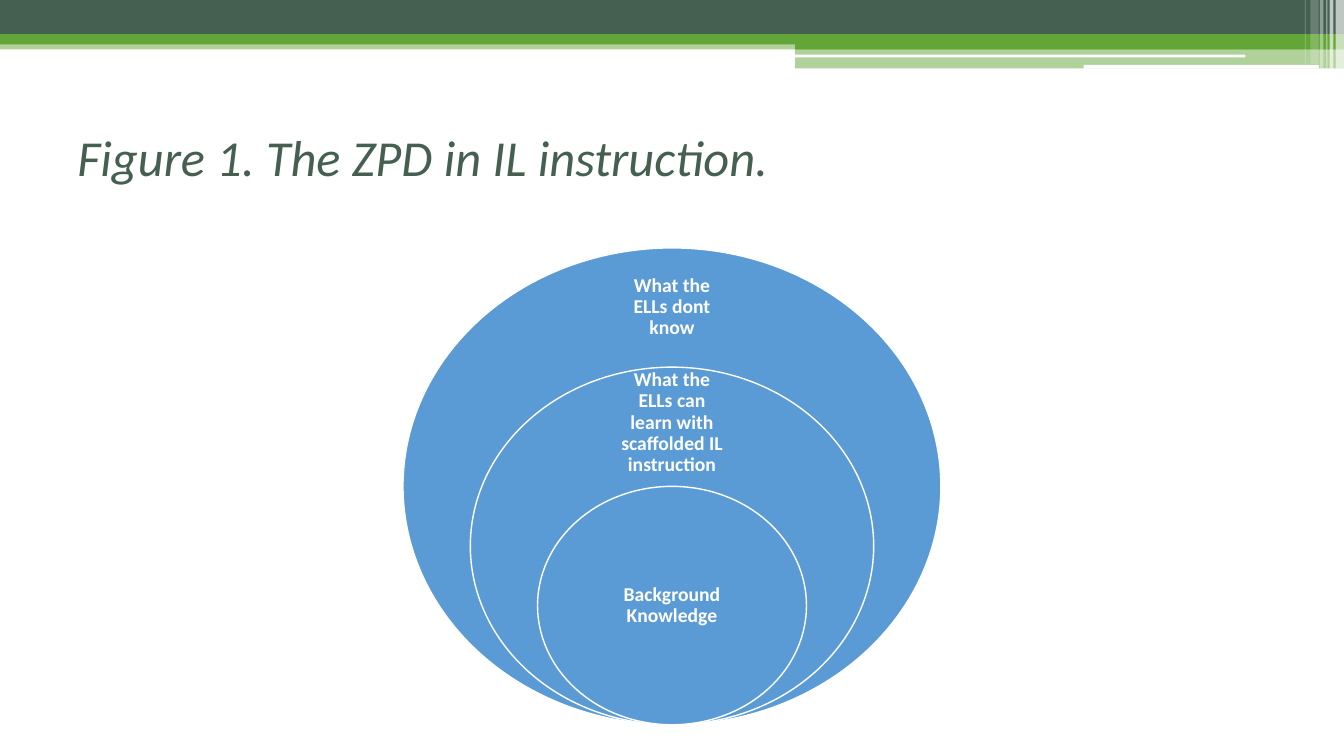
from pptx import Presentation
from pptx.dml.color import RGBColor
from pptx.enum import shapes, text
from pptx.oxml import ns
from pptx.util import Pt
from lxml import etree

W, H = 960, 540
DARK, GREEN, WHITE, BLUE = "455F51", "63A537", "FFFFFF", "5B9BD5"
TITLE = "Figure 1. The ZPD in IL instruction."

# Header bands: left, top, width, height, colour, opacity %
BANDS = [
    (0, 28.8, W, 6.5, GREEN, 50),
    (0, 0, W, 24.5, DARK, 100),
    (0, 24.5, W, 7.2, GREEN, 100),
    (568, 28.1, 392, 7.2, GREEN, 100),
    (568, 34.7, 392, 14.2, GREEN, 50),
]
# White rules in the header: left, top, width, height
RULES = [(567.5, 39, 322, 2), (774, 46.3, 168, 2.7)]
# White stripes at the right: left, width, height, opacity %
STRIPES = [
    (954, 6, 49, 65), (949.8, 2.7, 49, 65), (947.5, 0.7, 49, 60),
    (942.7, 2.7, 49, 40), (936, 6, 46, 20), (932, 0.7, 46, 30),
]
# Nested circles: label, scale, label centre, label height
CIRCLES = [
    ("What the ELLs dont know", 1, 219.6, 36),
    ("What the ELLs can learn with scaffolded IL instruction", 0.75, 302, 34),
    ("Background Knowledge", 0.5, 432.7, 60),
]
CENTRE, BOTTOM = 480, 517.7
OUTER_W, OUTER_H, LABEL_W = 384.2, 340.6, 95.5


def rgb(value):
    return RGBColor.from_string(value)


def add_shape(kind, left, top, width, height, colour, opacity=100, line=None):
    sp = s.shapes.add_shape(kind, Pt(left), Pt(top), Pt(width), Pt(height))
    sp.shadow.inherit = False
    sp.fill.solid()
    sp.fill.fore_color.rgb = rgb(colour)
    if opacity < 100:
        clr = sp.fill._xPr.find(".//" + ns.qn("a:srgbClr"))
        etree.SubElement(clr, ns.qn("a:alpha"), val=str(opacity * 1000))
    if line:
        sp.line.color.rgb = rgb(line)
        sp.line.width = Pt(1)
    else:
        sp.line.fill.background()
    return sp


def write(sp, words, size, colour, bold=False, italic=False, spacing=1.0,
          align=text.PP_ALIGN.LEFT, anchor=text.MSO_ANCHOR.MIDDLE,
          inset_x=7.2, inset_y=0):
    tf = sp.text_frame
    tf.word_wrap = True
    tf.auto_size = text.MSO_AUTO_SIZE.NONE
    tf.vertical_anchor = anchor
    tf.margin_left = tf.margin_right = Pt(inset_x)
    tf.margin_top = tf.margin_bottom = Pt(inset_y)
    p = tf.paragraphs[0]
    p.alignment, p.line_spacing = align, spacing
    r = p.add_run()
    r.text = words
    r.font.name, r.font.size = "Calibri", Pt(size)
    r.font.bold, r.font.italic = bold, italic
    r.font.color.rgb = rgb(colour)


prs = Presentation()
prs.slide_width, prs.slide_height = Pt(W), Pt(H)
s = prs.slides.add_slide(prs.slide_layouts[5])
kinds = shapes.MSO_SHAPE

# Header
for left, top, width, height, colour, opacity in BANDS:
    add_shape(kinds.RECTANGLE, left, top, width, height, colour, opacity)
for rule in RULES:
    add_shape(kinds.ROUNDED_RECTANGLE, *rule, WHITE)
for left, width, height, opacity in STRIPES:
    add_shape(kinds.RECTANGLE, left, 0, width, height, WHITE, opacity)

# Title
title = s.shapes.title
title.left, title.top, title.width, title.height = Pt(48), Pt(90), Pt(864), Pt(84)
write(title, TITLE, 36, DARK, italic=True, anchor=text.MSO_ANCHOR.TOP)

# Circles share a centre line and a bottom edge
for label, scale, middle, height in CIRCLES:
    w, h = OUTER_W * scale, OUTER_H * scale
    add_shape(kinds.OVAL, CENTRE - w / 2, BOTTOM - h, w, h, BLUE, line=WHITE)
    box = s.shapes.add_textbox(Pt(CENTRE - LABEL_W / 2), Pt(middle - height / 2),
                               Pt(LABEL_W), Pt(height))
    write(box, label, 14, WHITE, bold=True, spacing=0.9,
          align=text.PP_ALIGN.CENTER, inset_x=8, inset_y=8)

prs.save("out.pptx")
